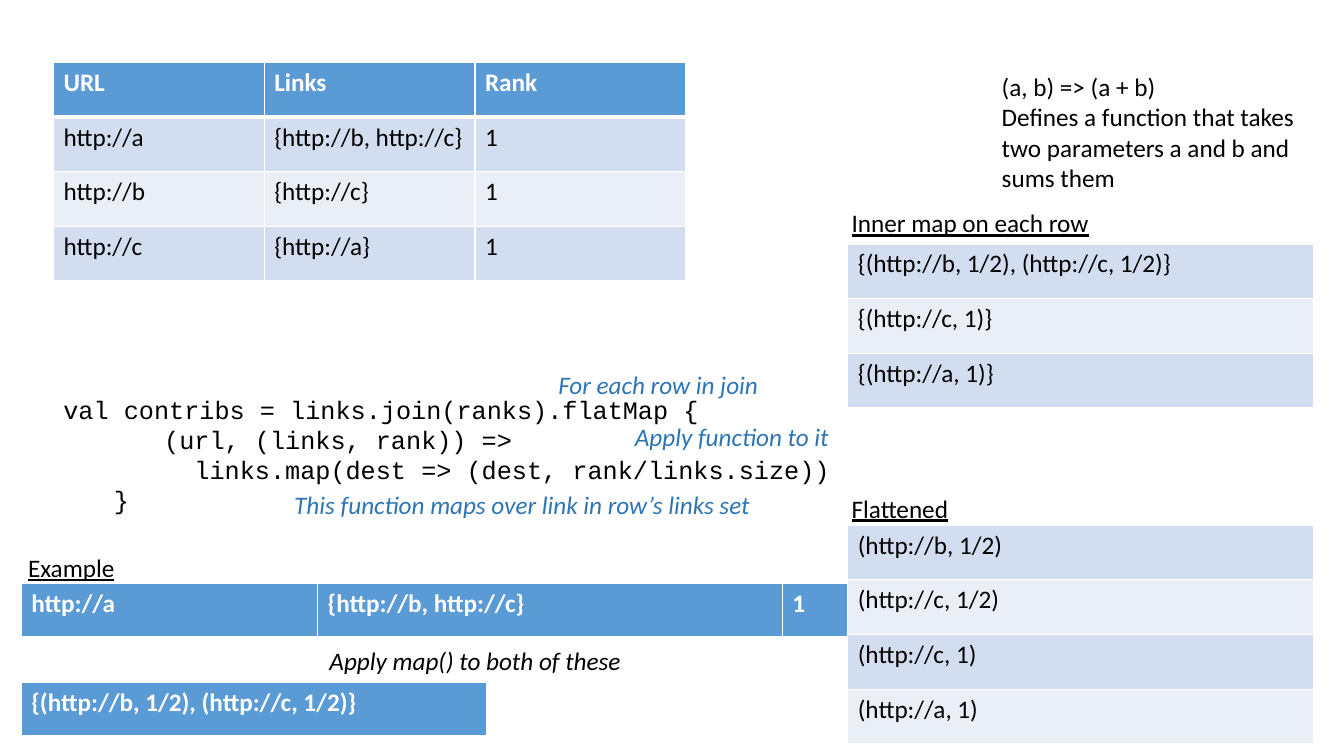
from lxml.etree import SubElement
from pptx import Presentation
from pptx.dml.color import RGBColor
from pptx.enum.text import MSO_AUTO_SIZE
from pptx.oxml.ns import qn
from pptx.util import Inches, Pt

COLORS = {
    "text": "000000",
    "note": "2E75B6",
    "white": "FFFFFF",
    "header": "5B9BD5",
    "band_dark": "D2DEEF",
    "band_light": "EAEFF7",
}
ROW = 7.23  # table row height, percent of the slide height
LINE = 5.33  # one-line text box height
LEFT, RIGHT = 3.98, 63.08  # left edges of the main and result columns
RIGHT_LABEL = 62.63
EXAMPLE = 1.58
RESULT_WIDTH = 34.65


class SlideBuilder:
    """Places elements on one slide; lengths are percent of its width and height."""

    def __init__(self, prs):
        self.width, self.height = prs.slide_width, prs.slide_height
        self.s = prs.slides.add_slide(prs.slide_layouts[6])

    def x(self, share):
        return round(self.width * share / 100)

    def y(self, share):
        return round(self.height * share / 100)

    def style(self, p, color="text", face="Calibri", **flags):
        p.font.name, p.font.size = face, Pt(18)
        p.font.color.rgb = RGBColor.from_string(COLORS[color])
        for flag, value in flags.items():
            setattr(p.font, flag, value)

    def text(self, left, top, width, lines, height=LINE, **style):
        sp = self.s.shapes.add_textbox(self.x(left), self.y(top), self.x(width), self.y(height))
        tf = sp.text_frame
        tf.word_wrap = True
        tf.auto_size = MSO_AUTO_SIZE.SHAPE_TO_FIT_TEXT
        tf.text = "\n".join(lines)
        for p in tf.paragraphs:
            self.style(p, **style)

    def borders(self, cell, bottom):
        tc_pr = cell._tc.get_or_add_tcPr()
        for side, points in (("L", 1), ("R", 1), ("T", 1), ("B", bottom)):
            ln = SubElement(tc_pr, qn(f"a:ln{side}"), w=str(Pt(points)))
            fill = SubElement(ln, qn("a:solidFill"))
            SubElement(fill, qn("a:srgbClr"), val=COLORS["white"])

    def table(self, left, top, widths, rows, header=True):
        frame = self.s.shapes.add_table(
            len(rows), len(widths), self.x(left), self.y(top),
            self.x(sum(widths)), self.y(ROW * len(rows)))
        table = frame.table
        table.first_row = header
        for column, width in zip(table.columns, widths):
            column.width = self.x(width)
        for i, values in enumerate(rows):
            is_header = header and i == 0
            band = "band_light" if (i - header) % 2 else "band_dark"
            for j, value in enumerate(values):
                cell = table.cell(i, j)
                self.borders(cell, 3 if is_header else 1)
                cell.fill.solid()
                cell.fill.fore_color.rgb = RGBColor.from_string(
                    COLORS["header" if is_header else band])
                cell.text = value
                self.style(cell.text_frame.paragraphs[0],
                           "white" if is_header else "text", bold=is_header)


def main():
    prs = Presentation()
    prs.slide_width, prs.slide_height = Inches(13.333), Inches(7.5)
    slide = SlideBuilder(prs)
    note = {"color": "note", "italic": True}
    mapped = "{(http://b, 1/2), (http://c, 1/2)}"

    slide.table(LEFT, 8.27, [15.68] * 3, [
        ("URL", "Links", "Rank"),
        ("http://a", "{http://b, http://c}", "1"),
        ("http://b", "{http://c}", "1"),
        ("http://c", "{http://a}", "1"),
    ])
    slide.text(LEFT, 51.47, 79.43, [
        "val contribs = links.join(ranks).flatMap {",
        "\t\t(url, (links, rank)) =>",
        "\t\t  links.map(dest => (dest, rank/links.size))",
        "\t}",
    ], height=17.47, face="Courier New")
    slide.text(46.5, 55.07, 38.93, ["Apply function to it"], **note)
    slide.text(21.15, 64.13, 36.08, ["This function maps over link in row’s links set"], **note)
    slide.text(73.8, 8.8, 24.23, [
        "(a, b) => (a + b)",
        "Defines a function that takes two parameters a and b and sums them",
    ], height=17.47)

    slide.table(EXAMPLE, 77.2, [22.05, 34.58, 9.6], [("http://a", "{http://b, http://c}", "1")])
    slide.text(23.78, 84.67, 27.98, ["Apply map() to both of these"], italic=True)
    slide.table(EXAMPLE, 90.27, [RESULT_WIDTH], [(mapped,)])

    inner_rows = [mapped, "{(http://c, 1)}", "{(http://a, 1)}"]
    flat_rows = ["(http://b, 1/2)", "(http://c, 1/2)", "(http://c, 1)", "(http://a, 1)"]
    for top, values in ((32.27, inner_rows), (69.47, flat_rows)):
        slide.table(RIGHT, top, [RESULT_WIDTH], [(v,) for v in values], header=False)

    for left, top, width, label in (
        (1.35, 72.4, 10.5, "Example"),
        (RIGHT_LABEL, 26.8, 20.7, "Inner map on each row"),
        (RIGHT_LABEL, 64.53, 20.7, "Flattened"),
    ):
        slide.text(left, top, width, [label], underline=True)
    slide.text(40.8, 48.13, 33.15, ["For each row in join"], **note)

    prs.save("out.pptx")


if __name__ == "__main__":
    main()
